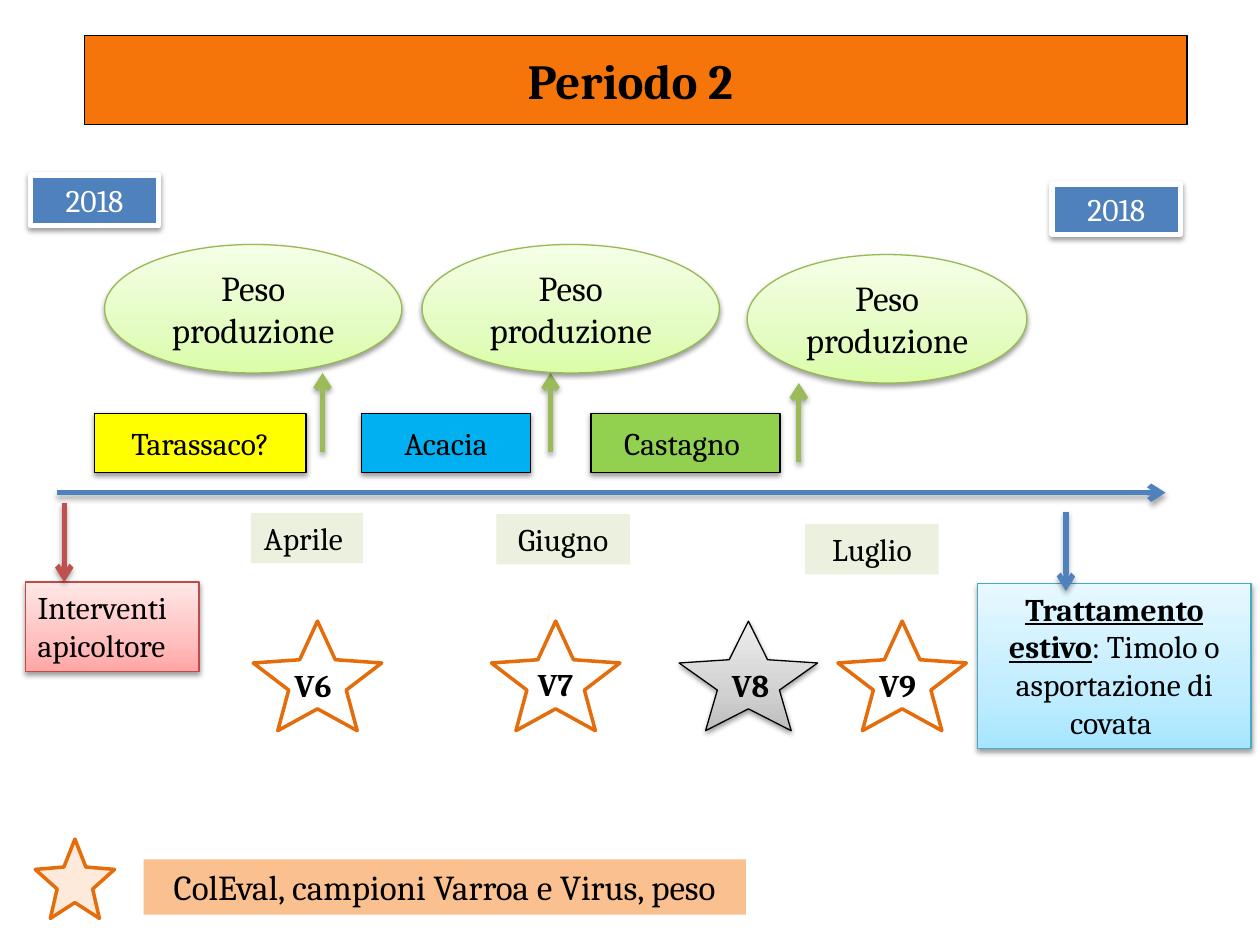
from copy import deepcopy

from lxml.etree import SubElement
from pptx import Presentation
from pptx.dml.color import RGBColor
from pptx.enum.shapes import MSO_CONNECTOR, MSO_SHAPE
from pptx.enum.text import MSO_ANCHOR, MSO_AUTO_SIZE, PP_ALIGN
from pptx.oxml.ns import qn
from pptx.util import Inches, Pt

FONT = "Cambria"
GREEN = ["DAFDA7", "E4FCC2", "F5FFE7"]
RED = ["FFA6A5", "FFC0BF", "FFE7E7"]
BLUE = ["A7E6FF", "C1EDFF", "E7F8FF"]
GREY = ["BDBDBD", "D1D1D1", "EEEEEE"]
MONTH = "EBF1DE"
ORANGE = "E46C0A"
ACCENT = "4F81BD"


def colour(value):
    return RGBColor.from_string(value)


def inches(*lengths):
    return [Inches(length) for length in lengths]


def add_shadow(effects, opacity, distance):
    shadow = SubElement(effects, qn("a:outerShdw"), blurRad=str(Pt(3.1)),
                        dist=str(Pt(distance)), dir="5400000", rotWithShape="0")
    tone = SubElement(shadow, qn("a:srgbClr"), val="000000")
    SubElement(tone, qn("a:alpha"), val=str(opacity * 1000))


def paint(shape, fill, line, width, shadow):
    if fill is None:
        shape.fill.background()
    elif isinstance(fill, list):
        shape.fill.gradient()
        shape.fill.gradient_angle = 90
        stop_list = shape._element.spPr.find(".//" + qn("a:gsLst"))
        stop_list.append(deepcopy(stop_list[0]))
        for stop, position, tone in zip(shape.fill.gradient_stops, (0, 0.35, 1), fill):
            stop.position = position
            stop.color.rgb = colour(tone)
    else:
        shape.fill.solid()
        shape.fill.fore_color.rgb = colour(fill)
    if line is None:
        shape.line.fill.background()
    else:
        shape.line.color.rgb = colour(line)
        shape.line.width = Pt(width)
    shape.shadow.inherit = False
    if shadow:
        add_shadow(shape._element.spPr.find(qn("a:effectLst")), 38, 1.6)


def write(shape, text, size=18, tone="000000", bold=False,
          align=PP_ALIGN.CENTER, anchor=MSO_ANCHOR.MIDDLE):
    frame = shape.text_frame
    frame.word_wrap = True
    frame.auto_size = MSO_AUTO_SIZE.NONE
    frame.vertical_anchor = anchor
    para = frame.paragraphs[0]
    para.text = text
    para.alignment = align
    para.font.name = FONT
    para.font.size = Pt(size)
    para.font.bold = bold
    para.font.color.rgb = colour(tone)
    return para


def add_figure(page, kind, box, fill=None, line=None, width=0.75, shadow=False):
    shape = page.shapes.add_shape(kind, *inches(*box))
    paint(shape, fill, line, width, shadow)
    if kind == MSO_SHAPE.STAR_5_POINT:
        shape.adjustments[0] = 0.224
    return shape


def add_arrow(page, start, end, tone):
    arrow = page.shapes.add_connector(MSO_CONNECTOR.STRAIGHT, *inches(*start, *end))
    arrow.line.color.rgb = colour(tone)
    arrow.line.width = Pt(3)
    properties = arrow._element.spPr
    SubElement(properties.find(qn("a:ln")), qn("a:tailEnd"), type="arrow")
    add_shadow(SubElement(properties, qn("a:effectLst")), 35, 1.8)


def add_heading(page, box):
    title = page.shapes.title
    title.left, title.top, title.width, title.height = inches(*box)
    paint(title, "F5750B", "000000", 0.75, False)
    write(title, "Periodo 2 ", 28, bold=True)


def add_year(page, left, top):
    tag = add_figure(page, MSO_SHAPE.RECTANGLE, (left, top, 1.02, 0.4),
                     ACCENT, "FFFFFF", 3, True)
    write(tag, "2018", tone="FFFFFF", anchor=MSO_ANCHOR.TOP)


def add_bloom(page, name, left, width, fill):
    block = add_figure(page, MSO_SHAPE.RECTANGLE, (left, 3.28, width, 0.47),
                       fill, "000000", shadow=True)
    write(block, name)


def add_harvest(page, box, arrow_x):
    left, top, width, height = box
    bottom = top + height
    add_arrow(page, (arrow_x, bottom + 0.63), (arrow_x, bottom), "9BBB59")
    oval = add_figure(page, MSO_SHAPE.OVAL, box, GREEN, "98B955", shadow=True)
    write(oval, "Peso produzione", 20)


def add_month(page, name, left, top, width):
    write(add_figure(page, MSO_SHAPE.RECTANGLE, (left, top, width, 0.4), MONTH), name)


def add_sample(page, name, left, label_left, label_top=5.24,
               width=1.02, fill=None, line=ORANGE, weight=2):
    add_figure(page, MSO_SHAPE.STAR_5_POINT, (left, 4.93, width, 0.87),
               fill, line, weight, fill is not None)
    label = page.shapes.add_textbox(*inches(label_left, label_top, 0.62, 0.4))
    write(label, name, bold=True, align=PP_ALIGN.LEFT, anchor=MSO_ANCHOR.TOP)


def add_beekeeper(page, box):
    left, top, width, height = box
    note = add_figure(page, MSO_SHAPE.RECTANGLE, box, RED, "BF4C48", shadow=True)
    write(note, "Interventi apicoltore", align=PP_ALIGN.LEFT, anchor=MSO_ANCHOR.TOP)
    add_arrow(page, (left + 0.31, top - 0.63), (left + 0.31, top), "C0504D")


def add_treatment(page, box):
    left, top, width, height = box
    note = add_figure(page, MSO_SHAPE.RECTANGLE, box, BLUE, "46AAC5", shadow=True)
    para = write(note, "Trattamento estivo", anchor=MSO_ANCHOR.TOP)
    para.runs[0].font.bold = True
    para.runs[0].font.underline = True
    para.add_run().text = ": Timolo o asportazione di covata "
    add_arrow(page, (left + 0.7, top - 0.57), (left + 0.7, top + 0.06), ACCENT)


def add_legend(page, left, top):
    add_figure(page, MSO_SHAPE.STAR_5_POINT, (left, top, 0.63, 0.63), "FDEADA", ORANGE, 2)
    key = add_figure(page, MSO_SHAPE.RECTANGLE, (left + 0.86, top + 0.16, 4.78, 0.44), "FAC090")
    write(key, "ColEval, campioni Varroa e Virus, peso", 20, anchor=MSO_ANCHOR.TOP)


def main():
    deck = Presentation()
    deck.slide_width, deck.slide_height = inches(10, 7.5)
    page = deck.slides.add_slide(deck.slide_layouts[5])
    add_heading(page, (0.67, 0.28, 8.75, 0.71))
    add_arrow(page, (0.45, 3.91), (9.25, 3.91), ACCENT)
    for bloom in (("Tarassaco?", 0.75, 1.68, "FFFF00"),
                  ("Acacia", 2.87, 1.34, "00B0F0"),
                  ("Castagno ", 4.69, 1.5, "92D050")):
        add_bloom(page, *bloom)
    for box, arrow_x in (((0.83, 1.94, 2.36, 1.02), 2.56),
                         ((3.35, 1.94, 2.36, 1.02), 4.37),
                         ((5.93, 2.02, 2.22, 1.02), 6.34)):
        add_harvest(page, box, arrow_x)
    for month in (("Aprile ", 1.99, 4.07, 0.89),
                  ("Giugno", 3.94, 4.08, 1.06),
                  ("Luglio", 6.39, 4.16, 1.06)):
        add_month(page, *month)
    add_sample(page, "V6", 2.01, 2.24)
    add_sample(page, "V7", 3.9, 4.17, 5.23)
    add_sample(page, "V9", 6.65, 6.88)
    add_sample(page, "V8", 5.39, 5.71, width=1.1, fill=GREY, line="000000", weight=0.75)
    add_year(page, 0.24, 1.39)
    add_year(page, 8.35, 1.46)
    add_beekeeper(page, (0.2, 4.62, 1.38, 0.71))
    add_treatment(page, (7.76, 4.63, 2.17, 1.31))
    add_legend(page, 0.28, 6.66)
    deck.save("out.pptx")


if __name__ == "__main__":
    main()
